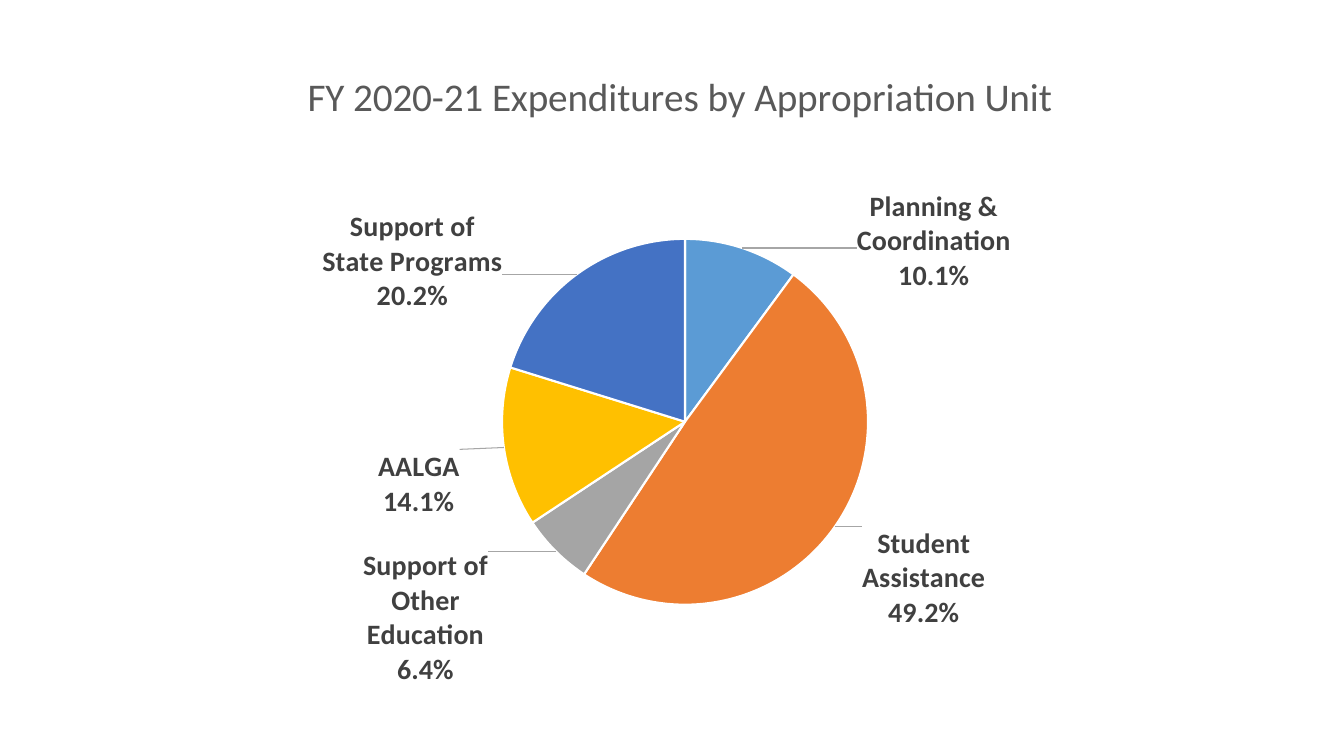
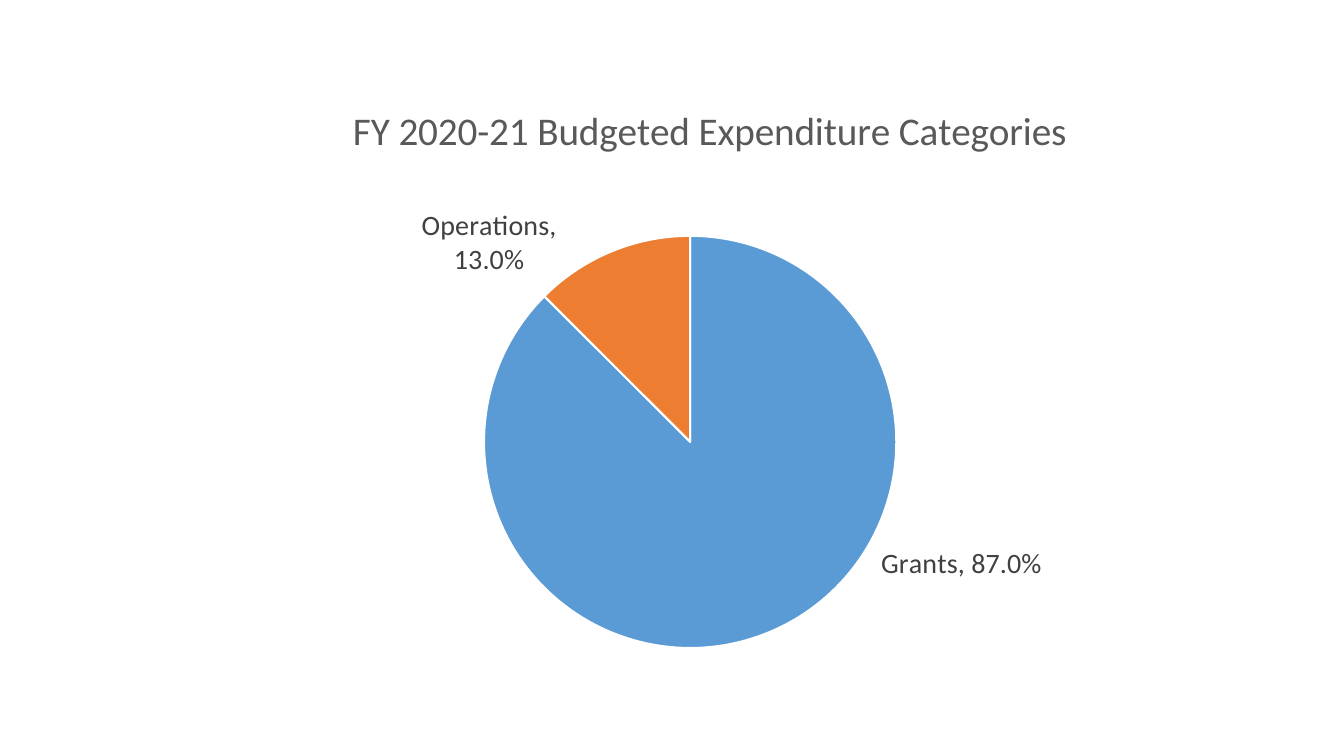
from dataclasses import dataclass
from typing import Any

import lxml.etree
import pptx
import pptx.chart.data
import pptx.dml.color
import pptx.enum.chart
import pptx.oxml.ns
import pptx.oxml.xmlchemy
import pptx.util

Inches = pptx.util.Inches
RGBColor = pptx.dml.color.RGBColor
qn = pptx.oxml.ns.qn

WHITE = RGBColor(0xFF, 0xFF, 0xFF)
LABEL_GREY = RGBColor(0x40, 0x40, 0x40)
TITLE_GREY = RGBColor(0x59, 0x59, 0x59)
LEADER_GREY = RGBColor(0xA6, 0xA6, 0xA6)
SLICE_COLOURS = (
    RGBColor(0x5B, 0x9B, 0xD5),
    RGBColor(0xED, 0x7D, 0x31),
    RGBColor(0xA5, 0xA5, 0xA5),
    RGBColor(0xFF, 0xC0, 0x00),
    RGBColor(0x44, 0x72, 0xC4),
)
PERCENT = "0.0%"
TITLE_FORMAT = {"name": "Calibri", "size": pptx.util.Pt(28), "bold": False}
LABEL_FORMAT = {"name": "Calibri", "size": pptx.util.Pt(20)}


@dataclass(frozen=True)
class Slice:
    name: str
    value: float
    shift: tuple[float, float]
    text: str = ""


@dataclass(frozen=True)
class Pie:
    title: str
    frame: tuple[float, float, float, float]
    title_at: tuple[float, float]
    circle: tuple[float, float, float]
    slices: tuple[Slice, ...]
    bold_labels: bool
    leader_lines: bool


PIES = (
    Pie(
        "FY 2020-21 Expenditures by Appropriation Unit",
        (1.93, 0.32, 9.46, 6.87),
        (2.98, 0.62),
        (4.98, 2.37, 3.63),
        (
            Slice("Planning & Coordination", 0.101, (1.12, 0.5)),
            Slice("Student Assistance", 0.492, (0.22, -0.04)),
            Slice("Support of Other Education", 0.064, (-0.63, -0.07)),
            Slice("AALGA", 0.141, (-0.38, 0.01)),
            Slice("Support of State Programs", 0.202, (-0.7, 0.43)),
        ),
        bold_labels=True,
        leader_lines=True,
    ),
    Pie(
        "FY 2020-21 Budgeted Expenditure Categories",
        (1.84, 0.66, 10.25, 6.23),
        (3.43, 0.96),
        (4.8, 2.34, 4.09),
        (
            Slice("Grants", 0.875, (1.09, -0.91), "Grants, 87.0%"),
            Slice("Operations", 0.125, (-0.52, 0.31), "Operations, 13.0%"),
        ),
        bold_labels=False,
        leader_lines=False,
    ),
)


def apply_format(font: Any, values: dict[str, Any], colour: RGBColor) -> None:
    for name, value in values.items():
        setattr(font, name, value)
    font.color.rgb = colour


def add_child(parent: Any, tag: str, **attributes: str) -> Any:
    child = lxml.etree.SubElement(parent, qn(tag))
    for name, value in attributes.items():
        child.set(name, value)
    return child


def set_layout(parent: Any, index: int, values: dict[str, Any]) -> None:
    for old in parent.findall(qn("c:layout")):
        parent.remove(old)
    layout = pptx.oxml.xmlchemy.OxmlElement("c:layout")
    parent.insert(index, layout)
    manual = add_child(layout, "c:manualLayout")
    for name, value in values.items():
        text = value if isinstance(value, str) else f"{value:.4f}"
        add_child(manual, f"c:{name}", val=text)


def set_title(chart: Any, pie: Pie) -> None:
    left, top, width, height = pie.frame
    chart.has_title = True
    title = chart.chart_title
    para = title.text_frame.paragraphs[0]
    span = para.add_run()
    span.text = pie.title
    apply_format(span.font, TITLE_FORMAT, TITLE_GREY)
    set_layout(title._element, 1, {
        "xMode": "edge",
        "yMode": "edge",
        "x": (pie.title_at[0] - left) / width,
        "y": (pie.title_at[1] - top) / height,
    })


def set_circle(chart: Any, pie: Pie) -> None:
    left, top, width, height = pie.frame
    circle_left, circle_top, diameter = pie.circle
    area = chart._chartSpace.find(".//" + qn("c:plotArea"))
    set_layout(area, 0, {
        "layoutTarget": "inner",
        "xMode": "edge",
        "yMode": "edge",
        "x": (circle_left - left) / width,
        "y": (circle_top - top) / height,
        "w": diameter / width,
        "h": diameter / height,
    })


def wrap_text(element: Any) -> None:
    for body in element.iter(qn("a:bodyPr")):
        body.set("wrap", "square")


def style_slice(point: Any, part: Slice, colour: RGBColor, bold: bool) -> None:
    point.format.fill.solid()
    point.format.fill.fore_color.rgb = colour
    point.format.line.color.rgb = WHITE
    point.format.line.width = pptx.util.Pt(1.5)
    label = point.data_label
    if part.text:
        span = label.text_frame.paragraphs[0].add_run()
        span.text = part.text
        font = span.font
    else:
        font = label.font
    apply_format(font, LABEL_FORMAT | {"bold": bold}, LABEL_GREY)
    label.position = pptx.enum.chart.XL_LABEL_POSITION.OUTSIDE_END


def place_label(element: Any, part: Slice, pie: Pie) -> None:
    set_layout(element, 1, {
        "x": part.shift[0] / pie.frame[2],
        "y": part.shift[1] / pie.frame[3],
    })
    if not part.text:
        number = pptx.oxml.xmlchemy.OxmlElement("c:numFmt")
        number.set("formatCode", PERCENT)
        number.set("sourceLinked", "0")
        element.insert(2, number)
    for tag in ("c:showVal", "c:showCatName"):
        element.find(qn(tag)).set("val", "1")
    for tag in ("c:showSerName", "c:showPercent", "c:showLegendKey"):
        element.find(qn(tag)).set("val", "0")
    for old in element.findall(qn("c:separator")):
        element.remove(old)
    add_child(element, "c:separator").text = "\n"


def set_labels(series: Any, pie: Pie) -> None:
    labels = series.data_labels
    bold = pie.bold_labels
    apply_format(labels.font, LABEL_FORMAT | {"bold": bold}, LABEL_GREY)
    for name, value in {
        "number_format": PERCENT,
        "number_format_is_linked": False,
        "show_value": True,
        "show_category_name": True,
        "show_percentage": False,
        "position": pptx.enum.chart.XL_LABEL_POSITION.OUTSIDE_END,
    }.items():
        setattr(labels, name, value)
    for index, part in enumerate(pie.slices):
        style_slice(series.points[index], part, SLICE_COLOURS[index], bold)
    element = labels._element
    for label, part in zip(element.findall(qn("c:dLbl")), pie.slices):
        place_label(label, part, pie)
    wrap_text(element)
    for tag in ("c:separator", "c:showLeaderLines", "c:leaderLines"):
        for old in element.findall(qn(tag)):
            element.remove(old)
    add_child(element, "c:separator").text = "\n"
    add_child(element, "c:showLeaderLines", val=str(int(pie.leader_lines)))
    if pie.leader_lines:
        shape = add_child(add_child(element, "c:leaderLines"), "c:spPr")
        line = add_child(shape, "a:ln", w="9525")
        fill = add_child(line, "a:solidFill")
        add_child(fill, "a:srgbClr", val=str(LEADER_GREY))


def add_pie(page: Any, pie: Pie) -> None:
    data = pptx.chart.data.CategoryChartData(number_format=PERCENT)
    data.categories = [part.name for part in pie.slices]
    data.add_series("Series 1", [part.value for part in pie.slices])
    frame = page.shapes.add_chart(
        pptx.enum.chart.XL_CHART_TYPE.PIE, *map(Inches, pie.frame), data
    )
    chart = frame.chart
    chart.has_legend = False
    chart.font.name = "Calibri"
    chart.font.size = pptx.util.Pt(10)
    plot = chart.plots[0]
    plot.vary_by_categories = True
    set_title(chart, pie)
    set_circle(chart, pie)
    set_labels(plot.series[0], pie)


def main() -> None:
    deck = pptx.Presentation()
    deck.slide_width = Inches(13.33)
    deck.slide_height = Inches(7.5)
    for pie in PIES:
        page = deck.slides.add_slide(deck.slide_layouts[6])
        add_pie(page, pie)
    deck.save("out.pptx")


if __name__ == "__main__":
    main()
